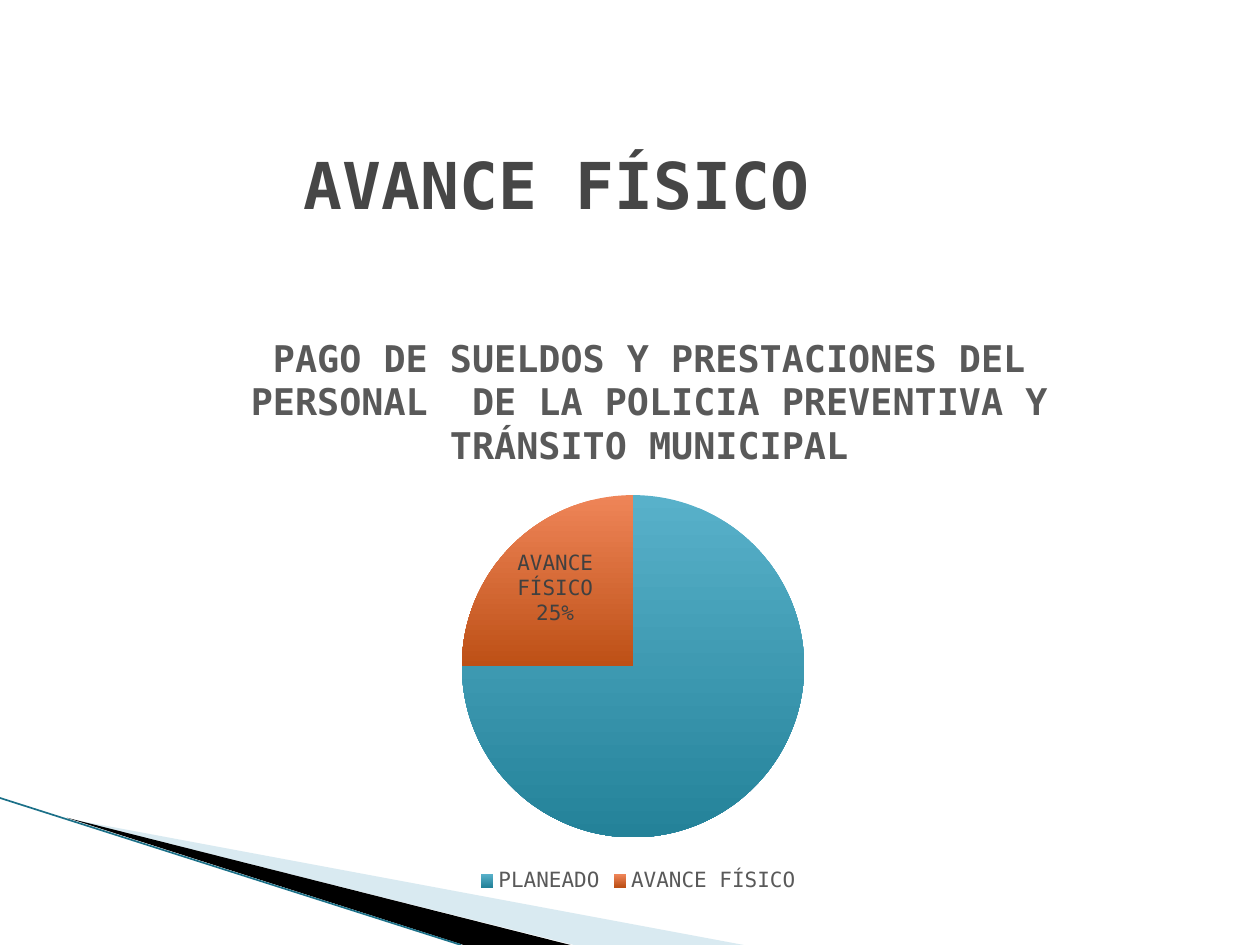
from dataclasses import dataclass

from lxml.etree import SubElement
from pptx import Presentation
from pptx.chart.data import CategoryChartData
from pptx.dml.color import RGBColor
from pptx.enum.chart import XL_CHART_TYPE, XL_LABEL_POSITION, XL_LEGEND_POSITION
from pptx.enum.shapes import MSO_CONNECTOR
from pptx.enum.text import MSO_ANCHOR, PP_ALIGN
from pptx.oxml import parse_xml
from pptx.oxml.ns import nsdecls, qn
from pptx.util import Pt


@dataclass(frozen=True)
class Theme:
    font: str = "DejaVu Sans Mono"
    title_size: float = 36.9
    chart_title_size: float = 21
    label_size: float = 12
    title_color: str = "464646"
    muted_color: str = "595959"
    label_color: str = "404040"
    pale_wedge: str = "A0CBDC"
    dark_wedge: str = "000000"
    edge: str = "1B7088"
    slices: tuple = (("58B1CA", "248299"), ("EF8558", "BD5016"))


THEME = Theme()


def rgb(value):
    return RGBColor.from_string(value)


def style_font(font, size, color, bold=False):
    font.name = THEME.font
    font.size = Pt(size)
    font.bold = bold
    font.color.rgb = rgb(color)


def add_wedge(slide, points, color, opacity=None):
    corners = [(Pt(x), Pt(y)) for x, y in points]
    builder = slide.shapes.build_freeform(*corners[0])
    builder.add_line_segments(corners[1:], close=True)
    shape = builder.convert_to_shape()
    shape.shadow.inherit = False
    shape.fill.solid()
    shape.fill.fore_color.rgb = rgb(color)
    shape.line.fill.background()
    if opacity is not None:
        color_element = next(shape.element.spPr.iter(qn("a:srgbClr")))
        SubElement(color_element, qn("a:alpha"), val=str(opacity * 1000))


def add_edge(slide, start, end):
    connector = slide.shapes.add_connector(
        MSO_CONNECTOR.STRAIGHT, *(Pt(value) for value in (*start, *end))
    )
    connector.line.color.rgb = rgb(THEME.edge)
    connector.line.width = Pt(0.95)
    SubElement(connector.element.spPr, qn("a:effectLst"))


def add_title(slide, text, left, top, width, height):
    shape = slide.shapes.add_textbox(Pt(left), Pt(top), Pt(width), Pt(height))
    text_frame = shape.text_frame
    text_frame.word_wrap = True
    text_frame.vertical_anchor = MSO_ANCHOR.MIDDLE
    text_frame.text = text
    paragraph = text_frame.paragraphs[0]
    paragraph.alignment = PP_ALIGN.CENTER
    style_font(paragraph.runs[0].font, THEME.title_size, THEME.title_color, True)


def manual_layout(**fractions):
    modes = "".join(
        f'<c:{name}Mode val="edge"/>' for name in ("x", "y")
    )
    values = "".join(
        f'<c:{name} val="{value}"/>' for name, value in fractions.items()
    )
    target = '<c:layoutTarget val="inner"/>' if "w" in fractions else ""
    return parse_xml(
        f'<c:layout {nsdecls("c")}><c:manualLayout>{target}{modes}{values}'
        "</c:manualLayout></c:layout>"
    )


def place_plot(chart, **fractions):
    plot_area = next(chart.element.iter(qn("c:plotArea")))
    for layout in plot_area.findall(qn("c:layout")):
        plot_area.remove(layout)
    plot_area.insert(0, manual_layout(**fractions))


def set_chart_title(chart, text):
    chart.has_title = True
    chart.chart_title.include_in_layout = False
    text_frame = chart.chart_title.text_frame
    text_frame.text = text
    paragraph = text_frame.paragraphs[0]
    paragraph.alignment = PP_ALIGN.CENTER
    style_font(
        paragraph.runs[0].font, THEME.chart_title_size, THEME.muted_color, True
    )
    title = next(chart.element.iter(qn("c:title")))
    for layout in title.findall(qn("c:layout")):
        title.remove(layout)
    title.find(qn("c:tx")).addnext(manual_layout(x=0.12, y=0.04))


def fill_slices(series):
    for index, colors in enumerate(THEME.slices):
        slice_format = series.points[index].format
        slice_format.fill.gradient()
        slice_format.fill.gradient_angle = 270
        for stop, color in zip(slice_format.fill.gradient_stops, colors):
            stop.color.rgb = rgb(color)
        slice_format.line.fill.background()


def label_slices(chart, hidden_index):
    labels = chart.plots[0].series[0].data_labels
    labels.show_value = False
    labels.show_category_name = True
    labels.show_percentage = True
    labels.number_format = "0%"
    labels.number_format_is_linked = False
    labels.position = XL_LABEL_POSITION.INSIDE_END
    style_font(labels.font, THEME.label_size, THEME.label_color)
    label_element = next(chart.element.iter(qn("c:dLbls")))
    separator = parse_xml(f'<c:separator {nsdecls("c")}>\n</c:separator>')
    label_element.find(qn("c:showBubbleSize")).addnext(separator)
    label_element.insert(0, parse_xml(
        f'<c:dLbl {nsdecls("c")}><c:idx val="{hidden_index}"/>'
        '<c:delete val="1"/></c:dLbl>'
    ))


def add_progress_chart(slide, title, values, left, top, width, height):
    data = CategoryChartData()
    data.categories = list(values)
    data.add_series("Series 1", list(values.values()))
    chart = slide.shapes.add_chart(
        XL_CHART_TYPE.PIE, Pt(left), Pt(top), Pt(width), Pt(height), data
    ).chart
    style_font(chart.font, THEME.label_size, THEME.muted_color)
    set_chart_title(chart, title)
    place_plot(chart, x=0.33, y=0.32, w=0.33, h=0.58)
    chart.has_legend = True
    chart.legend.position = XL_LEGEND_POSITION.BOTTOM
    chart.legend.include_in_layout = False
    style_font(chart.legend.font, THEME.label_size, THEME.muted_color)
    chart.plots[0].vary_by_categories = True
    fill_slices(chart.plots[0].series[0])
    label_slices(chart, hidden_index=0)


def main():
    presentation = Presentation()
    presentation.slide_width, presentation.slide_height = Pt(720), Pt(540)
    slide = presentation.slides.add_slide(presentation.slide_layouts[6])
    add_wedge(slide, [(39.6, 468), (425, 540), (328, 540)], THEME.pale_wedge, 40)
    add_wedge(slide, [(38.2, 467.3), (326, 540), (265, 540)], THEME.dark_wedge)
    add_edge(slide, (0, 456), (263.5, 540))
    add_title(slide, "AVANCE FÍSICO", 68.4, 77, 499.7, 56.2)
    add_progress_chart(
        slide,
        "PAGO DE SUELDOS Y PRESTACIONES DEL PERSONAL  DE LA POLICIA "
        "PREVENTIVA Y TRÁNSITO MUNICIPAL",
        {"PLANEADO": 75, "AVANCE FÍSICO": 25},
        68.4, 173.5, 592.6, 339.8,
    )
    presentation.save("out.pptx")


if __name__ == "__main__":
    main()
